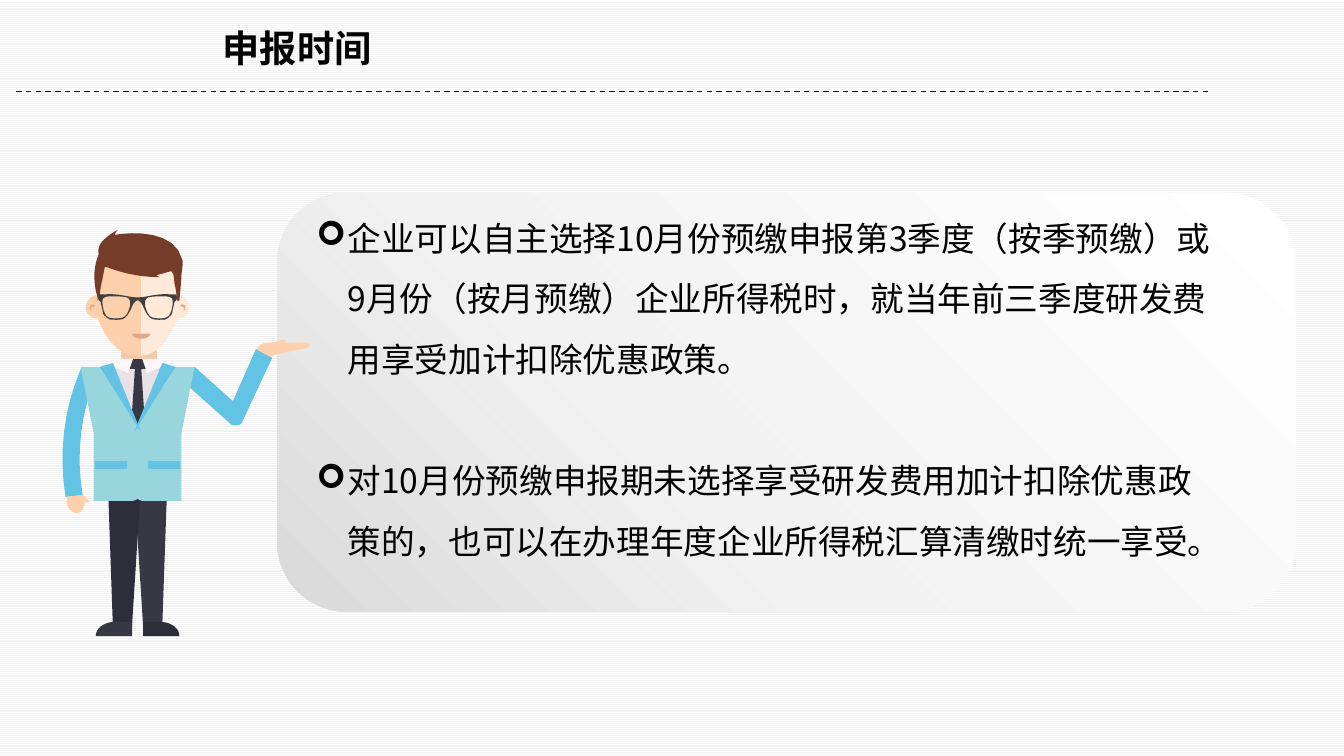
from dataclasses import dataclass

from lxml.etree import SubElement
from copy import deepcopy
from pptx import Presentation
from pptx.dml.color import RGBColor as Color
from pptx.enum.dml import MSO_LINE as Dash, MSO_PATTERN as Pattern
from pptx.enum.shapes import MSO_CONNECTOR as Connector, MSO_SHAPE as Shape
from pptx.enum.text import MSO_AUTO_SIZE as AutoSize
from pptx.oxml.ns import qn
from pptx.util import Inches, Pt


@dataclass(frozen=True)
class Theme:
    font: str = "Noto Sans CJK SC"
    title_size: float = 26.6
    body_size: float = 24
    ink: str = "000000"
    paper: str = "FFFFFF"
    stripe: str = "F2F2F2"
    card_stops: tuple = ((0, "FFFFFF"), (0.62, "F2F2F2"), (1, "D9D9D9"))
    skin: str = "FDD0AB"
    light_skin: str = "FFE9D9"
    neck: str = "F4C8A9"
    feature: str = "DDAA87"
    hair: str = "753C29"
    glasses: str = "404041"
    blue: str = "63C3E4"
    vest: str = "98D5DC"
    shirt: str = "E8E1E5"
    collar: str = "FEF6FA"
    dark: str = "2D2E3A"
    charcoal: str = "373844"


THEME = Theme()
TITLE = "申报时间"
POINTS = [
    "企业可以自主选择10月份预缴申报第3季度（按季预缴）或9月份（按月预缴）企业所得税时，"
    "就当年前三季度研发费用享受加计扣除优惠政策。",
    "对10月份预缴申报期未选择享受研发费用加计扣除优惠政策的，也可以在办理年度企业所得税汇算清缴时统一享受。",
]

# Presenter outlines on a 256-unit wide grid: pairs are corners,
# six numbers are a cubic curve (two controls and the end).
FIGURE_WIDTH = 256
MIRROR_SUM = 157
ARM = [(135, 136), (173, 170), (196, 118), (212, 127), (183, 189),
       (182, 192, 180, 194, 177, 194), (175, 194), (173, 194, 171, 194, 170, 192), (124, 151)]
FACE_LEFT = [(82, 35), (90, 28), (40, 28), (40, 28, 39, 48, 39, 65), (38, 65),
             (32, 65, 27, 71, 27, 77), (27, 83, 32, 88, 38, 88), (39, 88),
             (39, 88, 49, 117, 69, 124), (82, 125)]
FACE_RIGHT = [(82, 35), (82, 35, 85, 34, 91, 28), (118, 28), (118, 28, 118, 48, 119, 65),
              (125, 66, 130, 71, 130, 77), (130, 83, 125, 88, 119, 88), (118, 88),
              (118, 88, 109, 115, 91, 123), (88, 124, 84, 125, 82, 125)]
LEG = [(73, 393), (54, 393), (49, 250), (82, 250)]
TIE = [(69, 240), (79, 250), (89, 240), (82, 136), (76, 136)]
COLLAR = [(69, 142), (55, 136), (55, 128), (74, 128)]
SLEEVE = [(24, 263), (7, 265), (0, 222, 5, 177, 23, 136), (28, 138, 33, 139, 39, 141),
          (22, 180, 17, 222, 24, 263)]
LOW_HAND = [(27, 265), (24, 263), (8, 265), (8, 270), (9, 276, 13, 281, 18, 281),
            (23, 281, 26, 276, 26, 270), (27, 271, 29, 271, 30, 270), (30, 269, 29, 267, 27, 265)]
VEST = [(72, 269), (77, 269, 81, 266, 82, 261), (82, 202), (55, 136), (22, 136),
        (35, 202), (35, 269)]
LAPEL = [(41, 136), (54, 132), (82, 201), (50, 150)]
EAR = [(32, 79), (32, 77, 34, 76, 36, 76), (37, 76), (36, 75, 35, 74, 34, 74),
       (32, 74, 31, 76, 31, 78), (31, 79, 32, 80, 33, 81)]
HAIR = [(123, 30), (116, 0, 73, 2, 56, 5), (56, 3, 59, 0, 59, 0), (53, 3, 48, 7, 45, 10),
        (43, 12), (40, 16, 39, 20, 40, 24), (36, 34, 33, 48, 39, 68), (39, 70), (41, 67),
        (41, 67, 41, 62, 42, 57), (46, 37), (48, 37), (58, 41, 77, 47, 100, 47), (97, 45),
        (97, 45, 102, 44, 108, 42), (112, 41), (114, 44), (114, 44, 115, 50, 115, 53),
        (116, 55, 118, 71, 118, 71), (120, 70), (120, 70, 122, 50, 122, 46),
        (122, 42, 124, 33, 123, 30)]
SHOE = [(54, 389), (44, 390, 37, 396, 37, 403), (73, 403), (73, 389)]
OPEN_HAND = [(247, 112), (224, 112), (225, 111, 226, 110, 223, 109),
             (220, 109, 216, 111, 213, 112), (207, 112), (197, 113, 197, 119, 197, 119),
             (210, 126), (210, 126, 218, 122, 237, 119), (256, 117, 247, 112, 247, 112)]
MOUTH = [(73, 103), (73, 106, 77, 108, 82, 108), (87, 108, 91, 106, 91, 103)]
FRAME = [(79, 67), (73, 67, 69, 66, 69, 66), (55, 63, 48, 64, 46, 64), (40, 64),
         (39, 67, 40, 70, 40, 70), (40, 70, 41, 70, 42, 72), (42, 73, 43, 76, 44, 81),
         (44, 83, 45, 85, 47, 86), (48, 88, 50, 88, 51, 89), (54, 89, 61, 90, 65, 88),
         (69, 85, 71, 81, 73, 76), (75, 71, 78, 70, 78, 70), (79, 70)]
LENS = [(71, 76), (70, 78, 69, 85, 64, 87), (56, 89, 50, 87, 50, 87), (44, 85, 43, 71, 44, 69),
        (45, 66, 49, 66, 56, 66), (64, 66, 68, 67, 68, 67), (72, 69, 71, 73, 71, 76)]


def rectangle(left, top, right, bottom):
    return [(left, top), (right, top), (right, bottom), (left, bottom)]


def flatten(outline, steps=8):
    """Turn corners and cubic curves into a list of corners."""
    corners = []
    for part in outline:
        if len(part) == 2:
            corners.append(part)
            continue
        knots = [corners[-1], part[:2], part[2:4], part[4:]]
        for step in range(1, steps + 1):
            t = step / steps
            weights = ((1 - t) ** 3, 3 * t * (1 - t) ** 2, 3 * t * t * (1 - t), t ** 3)
            corners.append(tuple(sum(w * knot[axis] for w, knot in zip(weights, knots))
                                 for axis in (0, 1)))
    return corners


def mirror(corners):
    return [(MIRROR_SUM - x, y) for x, y in corners]


def add_presenter(page, left, top, width):
    group = page.shapes.add_group_shape()
    unit = width / FIGURE_WIDTH

    def draw(fill, *contours):
        scaled = [[(round(left + x * unit), round(top + y * unit)) for x, y in contour]
                  for contour in contours]
        builder = group.shapes.build_freeform(*scaled[0][0])
        builder.add_line_segments(scaled[0][1:], close=True)
        for hole in scaled[1:]:
            builder.move_to(*hole[0])
            builder.add_line_segments(hole[1:], close=True)
        shape = builder.convert_to_shape()
        shape.shadow.inherit = False
        shape.fill.solid()
        shape.fill.fore_color.rgb = Color.from_string(fill)
        shape.line.fill.background()

    def draw_single(outline, fill):
        draw(fill, flatten(outline))

    def draw_pair(outline, left_fill, right_fill=None):
        corners = flatten(outline)
        draw(right_fill or left_fill, mirror(corners))
        draw(left_fill, corners)

    # Arm, neck and face
    draw_single(ARM, THEME.blue)
    draw_single(rectangle(62, 118, 98, 128), THEME.neck)
    draw_single(FACE_LEFT, THEME.skin)
    draw_single(FACE_RIGHT, THEME.light_skin)
    # Clothes
    draw_pair(LEG, THEME.dark, THEME.charcoal)
    draw_single(rectangle(46, 136, 111, 205), THEME.shirt)
    draw_single(rectangle(71, 128, 87, 138), THEME.charcoal)
    draw_single(TIE, THEME.charcoal)
    draw_pair(COLLAR, THEME.collar)
    draw_single(SLEEVE, THEME.blue)
    draw_single(LOW_HAND, THEME.skin)
    draw_pair(VEST, THEME.vest)
    draw_pair(LAPEL, THEME.blue)
    draw_pair(SHOE, THEME.charcoal, THEME.dark)
    draw_pair(rectangle(36, 229, 68, 237), THEME.blue)
    # Head details and open hand
    draw_pair(EAR, THEME.feature)
    draw_single(HAIR, THEME.hair)
    draw_single(OPEN_HAND, THEME.skin)
    draw_single(MOUTH, THEME.feature)
    half, lens = flatten(FRAME), flatten(LENS)
    draw(THEME.glasses, half + mirror(half)[::-1], lens, mirror(lens))


def add_words(para, words, size, bold=False):
    span = para.add_run()
    span.text = words
    for name, value in dict(name=THEME.font, size=Pt(size), bold=bold).items():
        setattr(span.font, name, value)
    span.font.color.rgb = Color.from_string(THEME.ink)
    SubElement(span.font._element, qn("a:ea"), typeface=THEME.font)


def add_header(page, left, top, width):
    box = page.shapes.add_textbox(left + Inches(1.95), top, Inches(1.68), Inches(0.55))
    box.text_frame.word_wrap = False
    box.text_frame.auto_size = AutoSize.SHAPE_TO_FIT_TEXT
    add_words(box.text_frame.paragraphs[0], TITLE, THEME.title_size, bold=True)
    rule_top = top + Inches(0.71)
    rule = page.shapes.add_connector(Connector.STRAIGHT, left, rule_top, left + width, rule_top)
    rule.line.color.rgb = Color.from_string(THEME.ink)
    rule.line.width = Pt(1)
    rule.line.dash_style = Dash.DASH
    SubElement(rule._element.spPr, qn("a:effectLst"))


def add_card(page, left, top, width, height):
    # Gradient panel
    card = page.shapes.add_shape(Shape.ROUNDED_RECTANGLE, left, top, width, height)
    card.shadow.inherit = False
    card.line.fill.background()
    card.fill.gradient()
    card.fill.gradient_angle = 225
    stop_list = card._element.spPr.find(".//" + qn("a:gsLst"))
    stop_list.append(deepcopy(stop_list[0]))
    for stop, (position, color) in zip(card.fill.gradient_stops, THEME.card_stops):
        stop.position = position
        stop.color.rgb = Color.from_string(color)
    # Bulleted text
    box = page.shapes.add_textbox(left + Inches(0.29), top, Inches(9.12), Inches(3.73))
    frame = box.text_frame
    frame.word_wrap = True
    for index, words in enumerate(POINTS):
        para = frame.add_paragraph() if index else frame.paragraphs[0]
        para.line_spacing = 1.5
        if index:
            para.space_before = Pt(43.5)
        props = para._element.get_or_add_pPr()
        props.set("marL", str(Inches(0.31)))
        props.set("indent", str(-Inches(0.31)))
        SubElement(props, qn("a:buFont"), typeface="Wingdings")
        SubElement(props, qn("a:buChar"), char="➢")
        add_words(para, words, THEME.body_size)


def main():
    deck = Presentation()
    deck.slide_width, deck.slide_height = Inches(13.33), Inches(7.5)
    page = deck.slides.add_slide(deck.slide_layouts[6])
    backdrop = page.background.fill
    backdrop.patterned()
    backdrop.pattern = Pattern.NARROW_HORIZONTAL
    backdrop.fore_color.rgb = Color.from_string(THEME.stripe)
    backdrop.back_color.rgb = Color.from_string(THEME.paper)
    add_card(page, Inches(2.75), Inches(1.91), Inches(10.1), Inches(4.16))
    add_header(page, Inches(0.16), Inches(0.2), Inches(11.83))
    add_presenter(page, Inches(0.58), Inches(2.28), Inches(2.56))
    deck.save("out.pptx")


if __name__ == "__main__":
    main()
